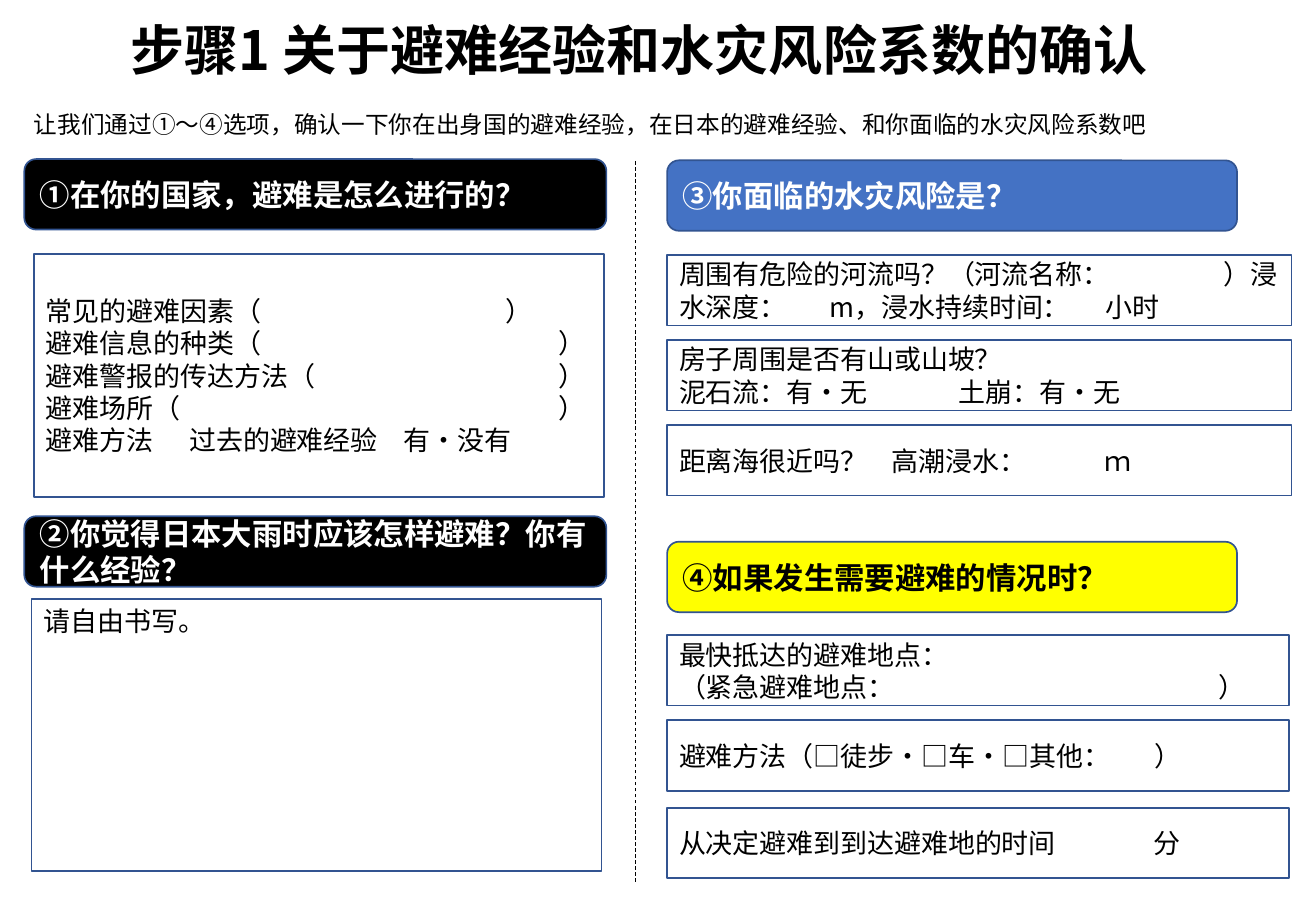
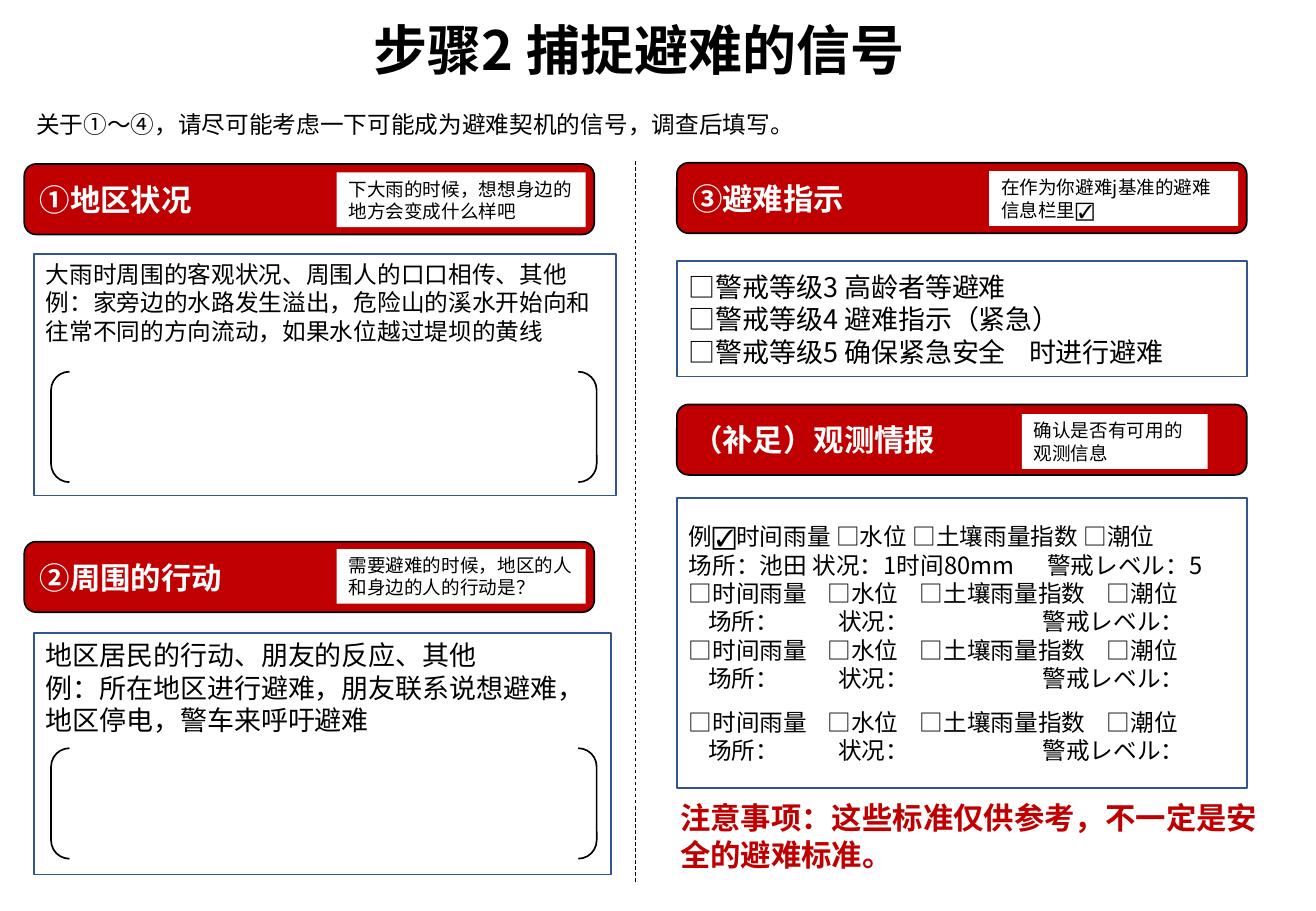
import pptx
import pptx.util
import pptx.dml.color
import pptx.enum.dml
import pptx.enum.shapes
import pptx.enum.text
import pptx.oxml
import pptx.oxml.ns
import lxml.etree
from dataclasses import dataclass
from typing import Optional

SCALE = 9144
FONT = "Noto Sans CJK SC"
BLACK, WHITE, RED = "000000", "FFFFFF", "C00000"
BLUE, YELLOW, NAVY = "4472C4", "FFFF00", "325491"
KIND = pptx.enum.shapes.MSO_SHAPE
ALIGN = pptx.enum.text.PP_ALIGN
ANCHOR = pptx.enum.text.MSO_ANCHOR


@dataclass(frozen=True)
class Para:
    text: str
    tabs: tuple[int, ...] = ()
    before: int = 0


@dataclass(frozen=True)
class Area:
    left: int
    top: int
    width: int
    height: int


@dataclass(frozen=True)
class Bar:
    area: Area
    text: str
    fill: Optional[str]
    ink: str = WHITE
    edge: Optional[str] = NAVY


@dataclass(frozen=True)
class Field:
    area: Area
    paras: tuple[Para, ...]
    size: int = 16
    fill: Optional[str] = None
    edge: Optional[str] = NAVY
    high: bool = False


@dataclass(frozen=True)
class Page:
    title: str
    intro: Field
    bars: tuple[Bar, ...]
    fields: tuple[Field, ...]
    pairs: tuple[Area, ...] = ()


def px(size: int) -> pptx.util.Emu:
    return pptx.util.Emu(size * SCALE)


def color(code: str) -> pptx.dml.color.RGBColor:
    return pptx.dml.color.RGBColor.from_string(code)


def bounds(area: Area) -> tuple:
    return px(area.left), px(area.top), px(area.width), px(area.height)


def style(para, size: int, ink: str, bold: bool, align, tabs: tuple[int, ...] = ()) -> None:
    para.alignment = align
    para.line_spacing = pptx.util.Pt(size * 1.2)
    font = para.font
    font.name = FONT
    font.size = pptx.util.Pt(size)
    font.bold = bold
    font.color.rgb = color(ink)
    qn = pptx.oxml.ns.qn
    base = para._p.get_or_add_pPr().find(qn("a:defRPr"))
    east = lxml.etree.Element(qn("a:ea"), typeface=FONT)
    base.find(qn("a:latin")).addnext(east)
    if tabs:
        stops = lxml.etree.Element(qn("a:tabLst"))
        for stop in tabs:
            lxml.etree.SubElement(stops, qn("a:tab"), pos=str(px(stop)), algn="l")
        base.addprevious(stops)


def write(shape, paras: tuple[Para, ...], size: int, ink: str = BLACK,
          bold: bool = False, align=ALIGN.LEFT, anchor=ANCHOR.MIDDLE) -> None:
    frame = shape.text_frame
    frame.word_wrap = True
    frame.vertical_anchor = anchor
    for rank, item in enumerate(paras):
        para = frame.add_paragraph() if rank else frame.paragraphs[0]
        para.text = item.text
        if item.before:
            para.space_before = pptx.util.Pt(item.before)
        style(para, size, ink, bold, align, item.tabs)


def draw(slide, kind, area: Area, fill: Optional[str], edge: Optional[str]):
    shape = slide.shapes.add_shape(kind, *bounds(area))
    shape.shadow.inherit = False
    if fill:
        shape.fill.solid()
        shape.fill.fore_color.rgb = color(fill)
    else:
        shape.fill.background()
    if edge:
        shape.line.color.rgb = color(edge)
        shape.line.width = pptx.util.Pt(1)
    else:
        shape.line.fill.background()
    return shape


def divide(slide) -> None:
    line = slide.shapes.add_connector(
        pptx.enum.shapes.MSO_CONNECTOR.STRAIGHT, px(523), px(726), px(523), px(131))
    line.line.color.rgb = color(BLACK)
    line.line.width = pptx.util.Pt(0.5)
    line.line.dash_style = pptx.enum.dml.MSO_LINE.DASH
    lxml.etree.SubElement(line._element.spPr, pptx.oxml.ns.qn("a:effectLst"))


def put(slide, field: Field) -> None:
    shape = draw(slide, KIND.RECTANGLE, field.area, field.fill, field.edge)
    anchor = ANCHOR.TOP if field.high else ANCHOR.MIDDLE
    write(shape, field.paras, field.size, anchor=anchor)


def build(deck, page: Page) -> None:
    slide = deck.slides.add_slide(deck.slide_layouts[6])
    title = slide.shapes.add_textbox(*bounds(Area(0, 5, 1052, 71)))
    write(title, (Para(page.title),), 32, bold=True, align=ALIGN.CENTER)
    put(slide, page.intro)
    divide(slide)
    for bar in page.bars:
        shape = draw(slide, KIND.ROUNDED_RECTANGLE, bar.area, bar.fill, bar.edge)
        write(shape, (Para(bar.text),), 18, bar.ink, bold=True)
    for field in page.fields:
        put(slide, field)
    for area in page.pairs:
        draw(slide, KIND.DOUBLE_BRACKET, area, None, BLACK)


def intro(left: int, width: int, text: str) -> Field:
    return Field(Area(left, 80, width, 45), (Para(text),), 14, WHITE, None)


def row(top: int, width: int, *paras: Para) -> Field:
    return Field(Area(549, top, width, 58), paras)


def label(left: int, top: int, width: int, text: str) -> Field:
    return Field(Area(left, top, width, 45), (Para(text),), 11, WHITE, None)


def band(left: int, top: int, text: str) -> Bar:
    return Bar(Area(left, top, 469, 58), text, RED, edge=BLACK)


def record(before: int = 0) -> tuple[Para, ...]:
    return (
        Para("□时间雨量\t□水位\t□土壤雨量指数\t□潮位", (114, 190, 344), before),
        Para("\t场所：\t状况：\t警戒レベル：", (16, 123, 291)),
    )


FIRST = Page(
    "步骤1 关于避难经验和水灾风险系数的确认",
    intro(18, 1043, "让我们通过①～④选项，确认一下你在出身国的避难经验，在日本的避难经验、和你面临的水灾风险系数吧"),
    (
        Bar(Area(20, 131, 479, 58), "①在你的国家，避难是怎么进行的？", BLACK),
        Bar(Area(20, 425, 479, 58), "②你觉得日本大雨时应该怎样避难？你有什么经验？", BLACK),
        Bar(Area(549, 132, 469, 58), "③你面临的水灾风险是？", BLUE),
        Bar(Area(549, 446, 469, 58), "④如果发生需要避难的情况时？", YELLOW, BLACK),
    ),
    (
        Field(Area(28, 209, 469, 200), (
            Para("常见的避难因素（\t）", (378,)),
            Para("避难信息的种类（\t）", (422,)),
            Para("避难警报的传达方法（\t）", (422,)),
            Para("避难场所（\t）", (422,)),
            Para("避难方法\t过去的避难经验\t有·没有", (118, 294)),
        )),
        Field(Area(26, 493, 469, 224), (Para("请自由书写。"),), high=True),
        row(210, 514, Para("周围有危险的河流吗？（河流名称：\t）浸水深度：\tm，浸水持续时间：\t小时",
                           (124, 351, 448))),
        row(280, 514, Para("房子周围是否有山或山坡？"),
            Para("泥石流：有・无\t土崩：有・无", (230,))),
        row(350, 514, Para("距离海很近吗？\t高潮浸水：\tｍ", (175, 350))),
        row(523, 512, Para("最快抵达的避难地点："),
            Para("（紧急避难地点：\t）", (444,))),
        row(593, 512, Para("避难方法（□徒步・□车・□其他：\t）", (391,))),
        row(665, 512, Para("从决定避难到到达避难地的时间\t分", (390,))),
    ),
)

SECOND = Page(
    "步骤2 捕捉避难的信号",
    intro(20, 1022, "关于①～④，请尽可能考虑一下可能成为避难契机的信号，调查后填写。"),
    (
        band(20, 135, "①地区状况"),
        band(20, 446, "②周围的行动"),
        band(557, 134, "③避难指示"),
        band(557, 333, "（补足）观测情报"),
        Bar(Area(547, 659, 509, 58), "注意事项：这些标准仅供参考，不一定是安全的避难标准。",
            None, RED, None),
    ),
    (
        label(277, 142, 205, "下大雨的时候，想想身边的地方会变成什么样吧"),
        label(277, 452, 205, "需要避难的时候，地区的人和身边的人的行动是？"),
        label(814, 141, 205, "在作为你避难j基准的避难信息栏里☑"),
        label(841, 341, 153, "确认是否有可用的观测信息"),
        Field(Area(28, 209, 479, 199), (
            Para("大雨时周围的客观状况、周围人的口口相传、其他"),
            Para("例：家旁边的水路发生溢出，危险山的溪水开始向和往常不同的方向流动，如果水位越过堤坝的黄线"),
        ), 14, high=True),
        Field(Area(28, 521, 475, 199), (
            Para("地区居民的行动、朋友的反应、其他"),
            Para("例：所在地区进行避难，朋友联系说想避难，地区停电，警车来呼吁避难"),
        ), high=True),
        Field(Area(557, 215, 469, 95), (
            Para("□警戒等级3 高龄者等避难"),
            Para("□警戒等级4 避难指示（紧急）"),
            Para("□警戒等级5 确保紧急安全\t时进行避难", (280,)),
        )),
        Field(Area(557, 410, 469, 239), (
            Para("例☑时间雨量 □水位 □土壤雨量指数 □潮位"),
            Para("场所：池田 状况：1时间80mm\t警戒レベル：5", (295,)),
            *record(), *record(), *record(9),
        ), 14),
    ),
    (Area(42, 306, 449, 91), Area(42, 616, 449, 91)),
)


def main() -> None:
    deck = pptx.Presentation()
    deck.slide_width, deck.slide_height = px(1083), px(750)
    for page in (FIRST, SECOND):
        build(deck, page)
    deck.save("out.pptx")


if __name__ == "__main__":
    main()
